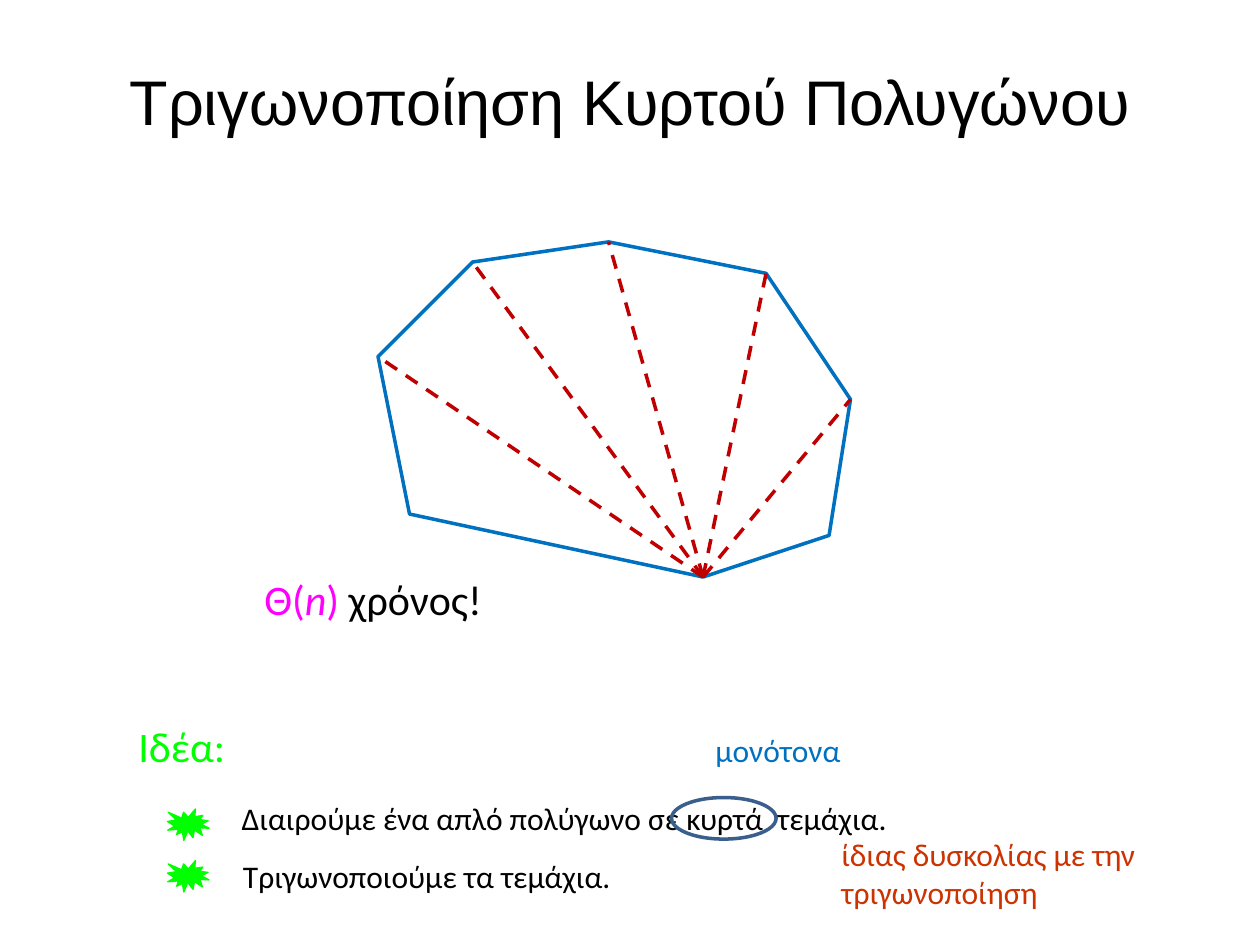
from lxml.etree import SubElement
from pptx import Presentation
from pptx.dml.color import RGBColor as RGB
from pptx.enum.dml import MSO_LINE as Dash
from pptx.enum.shapes import MSO_CONNECTOR as Link, MSO_SHAPE as Kind
from pptx.enum.text import MSO_ANCHOR as Anchor, MSO_AUTO_SIZE as Fit, PP_ALIGN as Align
from pptx.oxml.ns import qn
from pptx.util import Inches, Pt

THEME = {
    "head": "Arial", "body": "Calibri",
    "title": 36, "large": 24, "small": 18, "thick": 2, "thin": 0.75,
    "black": "000000", "blue": "0070C0", "red": "C00000", "pink": "FF00FF",
    "green": "00FF00", "rust": "CC3300", "navy": "3A5F8C",
}

TITLE = "Τριγωνοποίηση Κυρτού Πολυγώνου"
# The first corner is the one all diagonals start from.
CORNERS = [(5.58, 4.58), (6.58, 4.25), (6.75, 3.17), (6.08, 2.17),
           (4.83, 1.92), (3.75, 2.08), (3, 2.83), (3.25, 4.08)]
# Box, size, wrap, runs of (text, colour, italic)
TEXTS = [
    ((2, 4.5, 1.97, 0.5), "large", False,
     [("Θ(", "pink", False), ("n", "pink", True), (") ", "pink", False),
      ("χρόνος!", "black", False)]),
    ((1, 5.67, 0.89, 0.5), "large", False, [("Ιδέα:", "green", False)]),
    ((1.82, 6.29, 5.39, 0.4), "small", False,
     [("Διαιρούμε ένα απλό πολύγωνο σε κυρτά  τεμάχια.", "black", False)]),
    ((1.83, 6.75, 3.16, 0.4), "small", False,
     [("Τριγωνοποιούμε τα τεμάχια.", "black", False)]),
    ((5.58, 5.75, 1.21, 0.4), "small", False, [("μονότονα", "blue", False)]),
    ((6.58, 6.58, 3.25, 0.71), "small", True,
     [("ίδιας δυσκολίας με την τριγωνοποίηση", "rust", False)]),
]
# Kind, box, fill, line colour, line width
MARKS = [
    (Kind.EXPLOSION1, (1.33, 6.42, 0.33, 0.25), "green", "green", "thin"),
    (Kind.EXPLOSION1, (1.33, 6.83, 0.33, 0.25), "green", "green", "thin"),
    (Kind.OVAL, (5.33, 6.33, 0.83, 0.33), None, "navy", "thick"),
]


def tint(name):
    return RGB.from_string(THEME[name])


def inch(vals):
    return [Inches(v) for v in vals]


def style(font, face, size, hue, slant=False):
    form = {"name": THEME[face], "size": Pt(THEME[size]), "italic": slant}
    for key, val in form.items():
        setattr(font, key, val)
    font.color.rgb = tint(hue)


def paint(shape, fill, line, width):
    shape.shadow.inherit = False
    if fill:
        shape.fill.solid()
        shape.fill.fore_color.rgb = tint(fill)
    else:
        shape.fill.background()
    stroke(shape.line, line, width)


def stroke(line, hue, width):
    line.color.rgb = tint(hue)
    line.width = Pt(THEME[width])


def add_title(slide):
    title = slide.shapes.title
    title.left, title.top, title.width, title.height = inch((0.75, 0.17, 8.5, 1.25))
    title.text_frame.vertical_anchor = Anchor.MIDDLE
    para = title.text_frame.paragraphs[0]
    para.alignment = Align.CENTER
    run = para.add_run()
    run.text = TITLE
    style(run.font, "head", "title", "black")


def add_fan(slide):
    """Draw the polygon and its diagonals from the first corner."""
    hub, *rest = [inch(spot) for spot in CORNERS]
    pen = slide.shapes.build_freeform(*hub)
    pen.add_line_segments(rest, close=True)
    paint(pen.convert_to_shape(), None, "blue", "thick")
    for end in rest[1:-1]:
        link = slide.shapes.add_connector(Link.STRAIGHT, *hub, *end)
        stroke(link.line, "red", "thick")
        link.line.dash_style = Dash.DASH
        SubElement(link._element.spPr, qn("a:effectLst"))


def add_text(slide, box, size, wrap, runs):
    frame = slide.shapes.add_textbox(*inch(box)).text_frame
    frame.word_wrap = wrap
    frame.auto_size = Fit.SHAPE_TO_FIT_TEXT
    for text, hue, slant in runs:
        run = frame.paragraphs[0].add_run()
        run.text = text
        style(run.font, "body", size, hue, slant)


def main():
    deck = Presentation()
    deck.slide_width, deck.slide_height = inch((10, 7.5))
    slide = deck.slides.add_slide(deck.slide_layouts[5])
    add_title(slide)
    add_fan(slide)
    for item in TEXTS:
        add_text(slide, *item)
    for kind, box, *look in MARKS:
        paint(slide.shapes.add_shape(kind, *inch(box)), *look)
    deck.save("out.pptx")


if __name__ == "__main__":
    main()
